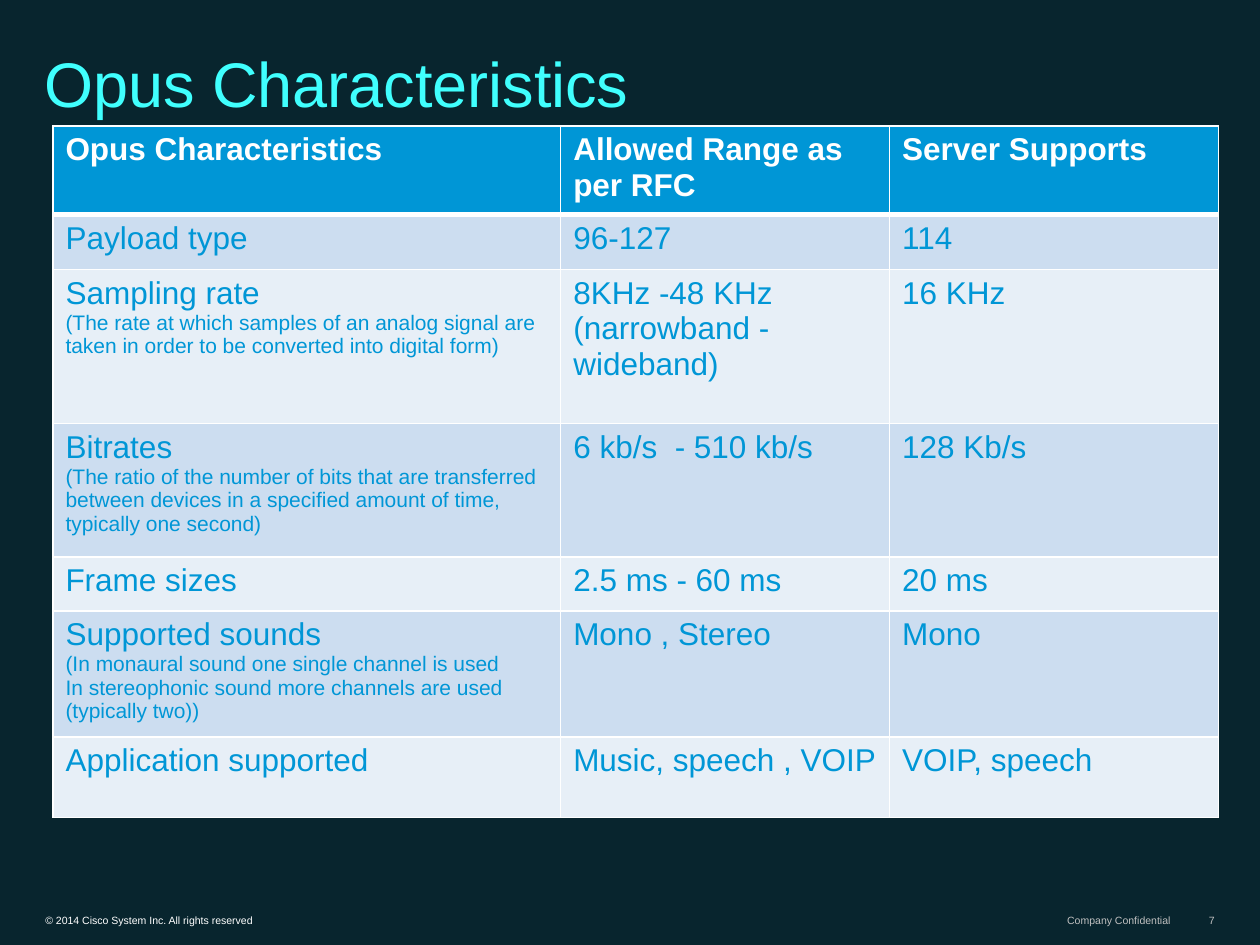
from lxml import etree
from pptx import Presentation
from pptx.dml.color import RGBColor
from pptx.enum.text import MSO_ANCHOR, MSO_AUTO_SIZE, PP_ALIGN
from pptx.oxml.ns import qn
from pptx.util import Inches, Pt

LEFT, RIGHT = PP_ALIGN.LEFT, PP_ALIGN.RIGHT
BOTTOM = MSO_ANCHOR.BOTTOM
NO_FIT = MSO_AUTO_SIZE.NONE
FONT = "Arial"
WHITE, BLUE, GREY = "FFFFFF", "0096D6", "C0C0C0"
BANDS = ("CCDDF0", "E7EFF7")
COLS = (4.03, 2.61, 2.61)
ROWS = (0.66, 0.44, 1.22, 1.06, 0.43, 0.94, 0.64)
DATA = (
    ("Opus Characteristics", "Allowed Range as per RFC", "Server Supports"),
    ("Payload type", "96-127", "114"),
    ("Sampling rate\n(The rate at which samples of an analog signal are taken "
     "in order to be converted into digital form)",
     "8KHz -48 KHz (narrowband - wideband)", "16 KHz"),
    ("Bitrates\n(The ratio of the number of bits that are transferred between "
     "devices in a specified amount of time, typically one second)",
     "6 kb/s  - 510 kb/s", "128 Kb/s"),
    ("Frame sizes", "2.5 ms - 60 ms", "20 ms"),
    ("Supported sounds\n(In monaural sound one single channel is used\n"
     "In stereophonic sound more channels are used (typically two))",
     "Mono , Stereo", "Mono"),
    ("Application supported", "Music, speech , VOIP", "VOIP, speech"),
)


def rgb(color):
    """Turn a hex string into a colour."""
    return RGBColor.from_string(color)


def add_run(p, text, size, color, bold=False):
    """Add one formatted run to a paragraph."""
    r = p.add_run()
    r.text = text
    r.font.name, r.font.size, r.font.bold = FONT, Pt(size), bold
    r.font.color.rgb = rgb(color)


def add_title(s, box, text):
    """Place the title placeholder in its box."""
    sp = s.shapes.title
    sp.left, sp.top, sp.width, sp.height = map(Inches, box)
    tf = sp.text_frame
    tf.auto_size, tf.word_wrap, tf.vertical_anchor = NO_FIT, True, BOTTOM
    p = tf.paragraphs[0]
    p.alignment, p.line_spacing = LEFT, 0.8
    add_run(p, text, 36, "40FFFE")


def set_borders(cell, bottom):
    """Draw white lines round a cell, with its own bottom width."""
    tc_pr = cell._tc.get_or_add_tcPr()
    for i, (side, width) in enumerate(zip("LRTB", (1, 1, 1, bottom))):
        ln = etree.Element(qn(f"a:ln{side}"), w=str(Pt(width)))
        fill = etree.SubElement(ln, qn("a:solidFill"))
        etree.SubElement(fill, qn("a:srgbClr"), val=WHITE)
        tc_pr.insert(i, ln)


def fill_cell(cell, text, header, band):
    """Write a heading or a value, with smaller notes below it."""
    cell.fill.solid()
    cell.fill.fore_color.rgb = rgb(BLUE if header else band)
    set_borders(cell, 3 if header else 1)
    tf = cell.text_frame
    for i, line in enumerate(text.split("\n")):
        p = tf.add_paragraph() if i else tf.paragraphs[0]
        add_run(p, line, 12 if i else 18, WHITE if header else BLUE, header)


def add_grid(s, left, top):
    """Place the comparison table with its corner at the given point."""
    table = s.shapes.add_table(
        len(ROWS), len(COLS), Inches(left), Inches(top),
        Inches(sum(COLS)), Inches(sum(ROWS))).table
    for column, width in zip(table.columns, COLS):
        column.width = Inches(width)
    for i, (row, height, texts) in enumerate(zip(table.rows, ROWS, DATA)):
        row.height = Inches(height)
        for cell, text in zip(row.cells, texts):
            fill_cell(cell, text, i == 0, BANDS[(i - 1) % 2])


def add_footer(s, top, height):
    """Place the footer texts along one line."""
    parts = (
        (0.27, 3.74, "© 2014 Cisco System Inc. All rights reserved", WHITE, LEFT),
        (8.38, 1, "Company Confidential", GREY, RIGHT),
        (9.45, 0.28, "7", GREY, RIGHT),
    )
    for left, width, text, color, align in parts:
        sp = s.shapes.add_textbox(*map(Inches, (left, top, width, height)))
        tf = sp.text_frame
        tf.word_wrap, tf.vertical_anchor = True, BOTTOM
        tf.margin_left = tf.margin_right = Inches(0.09)
        tf.margin_top = tf.margin_bottom = Inches(0.04)
        p = tf.paragraphs[0]
        p.alignment = align
        add_run(p, text, 6, color)


def main():
    """Build the slide and save it."""
    prs = Presentation()
    prs.slide_width, prs.slide_height = Inches(10), Inches(7.5)
    s = prs.slides.add_slide(prs.slide_layouts[5])
    s.background.fill.solid()
    s.background.fill.fore_color.rgb = rgb("08252E")
    add_footer(s, 7.2, 0.19)
    add_title(s, (0.25, 0.08, 9.39, 0.92), "Opus Characteristics")
    add_grid(s, 0.42, 1)
    prs.save("out.pptx")


if __name__ == "__main__":
    main()
